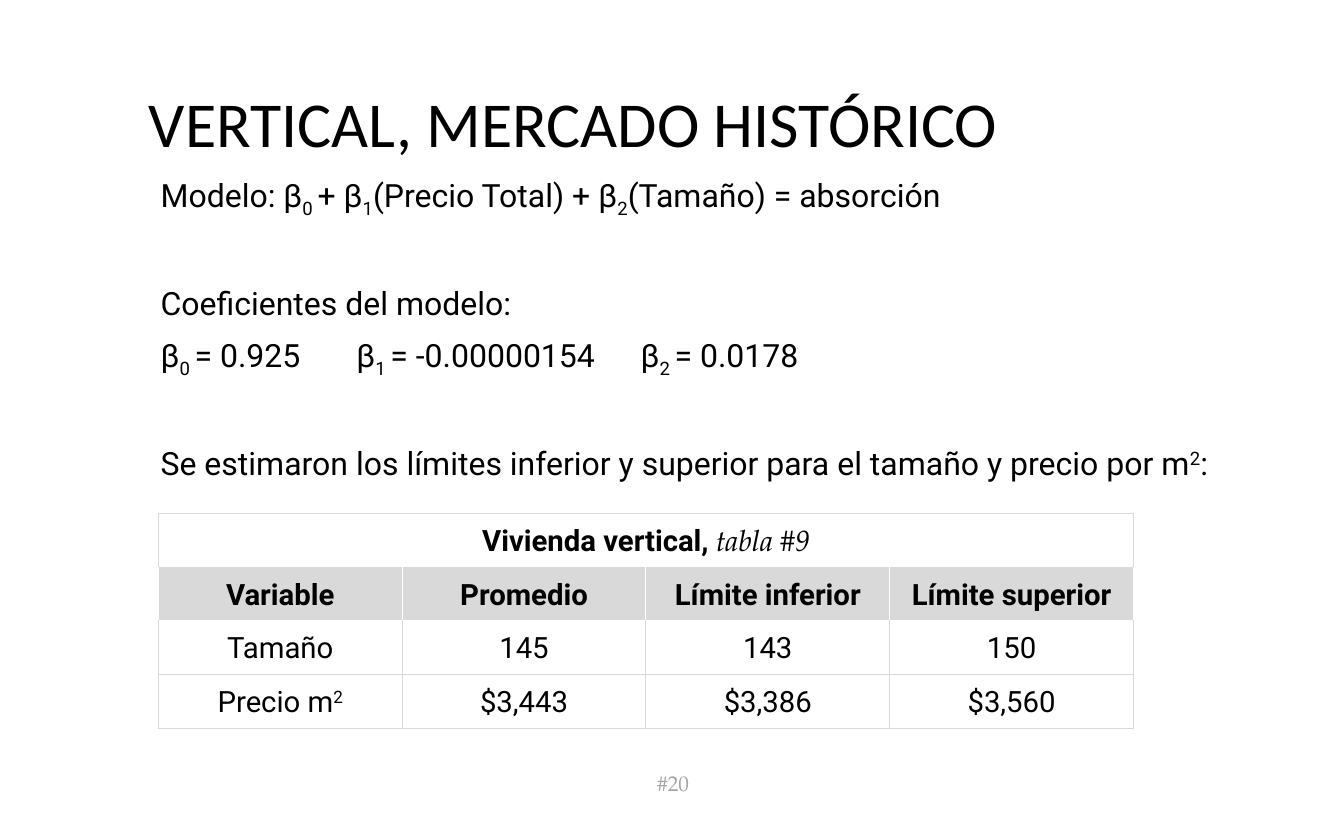
"""Build the slide on the vertical housing model and its estimated limits."""
import pptx
import pptx.util
import pptx.dml.color
import pptx.enum.text
import pptx.oxml
import pptx.oxml.ns

Cm = pptx.util.Cm
Pt = pptx.util.Pt
Anchor = pptx.enum.text.MSO_ANCHOR
Align = pptx.enum.text.PP_ALIGN

BLACK = pptx.dml.color.RGBColor(0x00, 0x00, 0x00)
WHITE = pptx.dml.color.RGBColor(0xFF, 0xFF, 0xFF)
LIGHT_GRAY = pptx.dml.color.RGBColor(0xD9, 0xD9, 0xD9)
MID_GRAY = pptx.dml.color.RGBColor(0xA6, 0xA6, 0xA6)
SERIF = "TeX Gyre Pagella"

SUB = {"baseline": -25}
SUPER = {"baseline": 30}
TITLE = "VERTICAL, MERCADO HISTÓRICO"
PAGE = "#20"
BODY = [
    (0, ["Modelo: β", ("0 ", SUB), "+ β", ("1", SUB), "(Precio Total) + β",
         ("2", SUB), "(Tamaño) = absorción"]),
    (38, ["Coeficientes del modelo:"]),
    (0, ["β", ("0 ", SUB), "= 0.925\tβ", ("1 ", SUB), "= -0.00000154\tβ",
         ("2 ", SUB), "= 0.0178"]),
    (38, ["Se estimaron los límites inferior y superior para el tamaño y precio por m",
          ("2", SUPER), ":"]),
]
TAB_STOPS = [Cm(5.18), Cm(12.7)]
CAPTION = ["Vivienda vertical, ", ("tabla #9", {"font": SERIF, "bold": False, "italic": True})]
ROWS = [
    [CAPTION],
    ["Variable", "Promedio", "Límite inferior", "Límite superior"],
    ["Tamaño", "145", "143", "150"],
    [["Precio m", ("2", SUPER)], "$3,443", "$3,386", "$3,560"],
]
ROW_FILLS = [WHITE, LIGHT_GRAY, WHITE, WHITE]
ROW_BORDERS = [
    {side: LIGHT_GRAY for side in "LRTB"},
    {"L": WHITE, "R": WHITE, "T": LIGHT_GRAY, "B": WHITE},
    {"L": LIGHT_GRAY, "R": LIGHT_GRAY, "T": WHITE, "B": LIGHT_GRAY},
    {side: LIGHT_GRAY for side in "LRTB"},
]
COLUMN_WIDTH, ROW_HEIGHT = Cm(6.45), Cm(1.42)


def write(paragraph, text, align=Align.LEFT, spacing=1.07, before=0, after=8, **style):
    paragraph.alignment = align
    paragraph.line_spacing = spacing
    paragraph.space_before = Pt(before)
    paragraph.space_after = Pt(after)
    for part in [text] if isinstance(text, str) else text:
        words, extra = (part, {}) if isinstance(part, str) else part
        look = {"font": "Roboto", "size": 24, "color": BLACK, "bold": False,
                "italic": False, "baseline": 0, **style, **extra}
        run = paragraph.add_run()
        run.text = words
        run.font.name = look["font"]
        run.font.size = Pt(look["size"])
        run.font.color.rgb = look["color"]
        run.font.bold = look["bold"]
        run.font.italic = look["italic"]
        if look["baseline"]:
            run.font._element.set("baseline", str(look["baseline"] * 1000))


def set_frame(shape, box, margins, anchor=Anchor.TOP):
    shape.left, shape.top, shape.width, shape.height = box
    frame = shape.text_frame
    frame.word_wrap = True
    frame.auto_size = pptx.enum.text.MSO_AUTO_SIZE.NONE
    frame.vertical_anchor = anchor
    frame.margin_left, frame.margin_top, frame.margin_right, frame.margin_bottom = margins
    return frame


def add_tab_stops(paragraph, positions):
    stops = "".join(f'<a:tab pos="{int(position)}" algn="l"/>' for position in positions)
    namespace = pptx.oxml.ns.nsdecls("a")
    paragraph._p.get_or_add_pPr().append(
        pptx.oxml.parse_xml(f"<a:tabLst {namespace}>{stops}</a:tabLst>"))


def set_borders(cell, borders):
    properties = cell._tc.get_or_add_tcPr()
    namespace = pptx.oxml.ns.nsdecls("a")
    for index, (side, color) in enumerate(borders.items()):
        properties.insert(index, pptx.oxml.parse_xml(
            f'<a:ln{side} {namespace} w="12700"><a:solidFill>'
            f'<a:srgbClr val="{color}"/></a:solidFill></a:ln{side}>'))


def add_limits_table(slide):
    columns = len(ROWS[1])
    table = slide.shapes.add_table(
        len(ROWS), columns, Cm(4.19), Cm(13.59),
        COLUMN_WIDTH * columns, ROW_HEIGHT * len(ROWS)).table
    table.first_row = table.horz_banding = False
    table.cell(0, 0).merge(table.cell(0, columns - 1))
    for row, texts in enumerate(ROWS):
        for column in range(columns):
            cell = table.cell(row, column)
            cell.fill.solid()
            cell.fill.fore_color.rgb = ROW_FILLS[row]
            set_borders(cell, ROW_BORDERS[row])
            cell.vertical_anchor = Anchor.MIDDLE
            cell.margin_left = cell.margin_right = Cm(0.18)
            cell.margin_top = cell.margin_bottom = 0
            if column < len(texts):
                write(cell.text_frame.paragraphs[0], texts[column],
                      align=Align.CENTER, size=22, bold=row < 2)


def main():
    presentation = pptx.Presentation()
    presentation.slide_width, presentation.slide_height = Cm(35.56), Cm(21.59)
    slide = presentation.slides.add_slide(presentation.slide_layouts[5])
    margins = (Cm(0.36), Cm(0.18), Cm(0.36), Cm(0.18))

    title = set_frame(slide.shapes.title, (Cm(3.58), Cm(2.41), Cm(31.01), Cm(1.98)), margins)
    write(title.paragraphs[0], TITLE, spacing=0.8, after=0, font="Calibri", size=48)

    body_box = (Cm(3.89), Cm(4.39), Cm(28.7), Cm(8.31))
    body = set_frame(slide.shapes.add_textbox(*body_box), body_box, margins)
    for index, (before, text) in enumerate(BODY):
        paragraph = body.add_paragraph() if index else body.paragraphs[0]
        write(paragraph, text, before=before)
        if any("\t" in part for part in text if isinstance(part, str)):
            add_tab_stops(paragraph, TAB_STOPS)

    add_limits_table(slide)

    page_box = (Cm(16.54), Cm(20.42), Cm(2.49), Cm(0.66))
    page = set_frame(slide.shapes.add_textbox(*page_box), page_box,
                     (Cm(0.3), Cm(0.05), Cm(0.25), Cm(0.13)), Anchor.MIDDLE)
    write(page.paragraphs[0], PAGE, align=Align.CENTER, spacing=1.0, after=0,
          font=SERIF, size=16, color=MID_GRAY)

    presentation.save("out.pptx")


if __name__ == "__main__":
    main()
